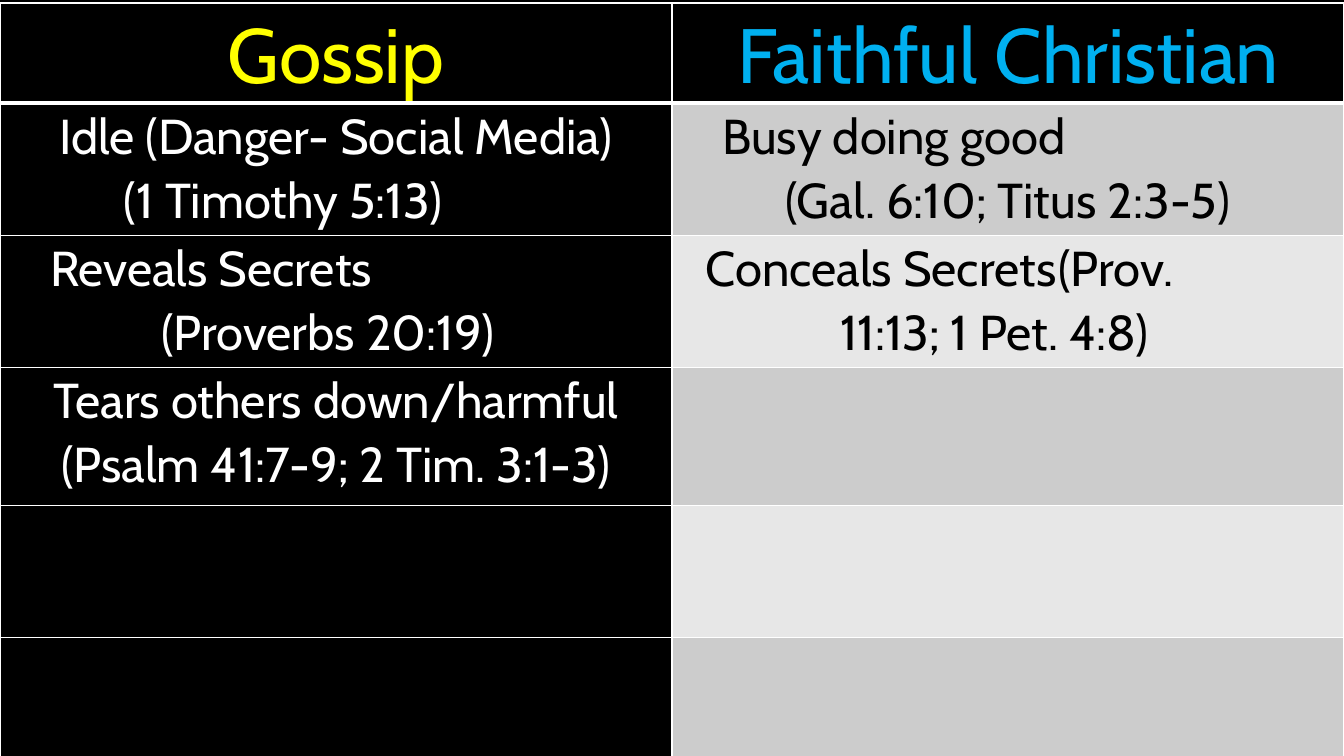
from dataclasses import dataclass

from lxml.etree import SubElement
from pptx import Presentation
from pptx.dml.color import RGBColor
from pptx.enum.text import MSO_ANCHOR, PP_ALIGN as Align
from pptx.oxml.ns import qn
from pptx.table import _Cell as Cell
from pptx.util import Inches, Pt

SLIDE_WIDTH = Inches(13.33)
SLIDE_HEIGHT = Inches(7.5)
COLUMN_WIDTH = SLIDE_WIDTH // 2
TABLE_TOP_PERCENT = 0.4
ROW_PERCENTS = (12.8, 17.47, 17.47, 18.27, 17.47, 18.8)

BLACK, WHITE = "000000", "FFFFFF"
YELLOW, BLUE = "FFFF00", "00B0F0"
BAND_FILLS = ("CCCCCC", "E7E7E7")
CELL_FORMAT = {
    "margin_left": Inches(0.07),
    "margin_right": Inches(0.07),
    "margin_top": 0,
    "margin_bottom": 0,
    "vertical_anchor": MSO_ANCHOR.TOP,
}


@dataclass(frozen=True)
class Line:
    text: str
    indent_percent: float | None = None
    tab_percent: float | None = None


@dataclass(frozen=True)
class Entry:
    lines: tuple[Line, ...]
    color: str
    fill: str
    size: float = 35
    bottom_border: float = 1


def heading(text: str, color: str) -> Entry:
    return Entry((Line(text),), color, BLACK, size=55, bottom_border=3)


GOSSIP = (
    (Line("Idle (Danger- Social Media)"), Line("(1 Timothy 5:13)", 17.4)),
    (Line("Reveals Secrets", 6.4), Line("(Proverbs 20:19)", 23)),
    (Line("Tears others down/harmful"), Line("(Psalm 41:7-9; 2 Tim. 3:1-3)")),
    (),
    (),
)
FAITHFUL = (
    (Line("Busy doing good", 6.4), Line("(Gal. 6:10; Titus 2:3-5)")),
    (Line("Conceals Secrets\t(Prov.", 4, 75.9), Line("11:13; 1 Pet. 4:8)", 24)),
    (),
    (),
    (),
)


def rgb(color: str) -> RGBColor:
    return RGBColor.from_string(color)


def across(percent: float) -> int:
    return round(COLUMN_WIDTH * percent / 100)


def down(percent: float) -> int:
    return round(SLIDE_HEIGHT * percent / 100)


def draw_borders(cell: Cell, top: float, bottom: float) -> None:
    properties = cell._tc.get_or_add_tcPr()
    for side, width in {"lnL": 1, "lnR": 1, "lnT": top, "lnB": bottom}.items():
        border = SubElement(properties, qn(f"a:{side}"), w=str(Pt(width)))
        paint = SubElement(border, qn("a:solidFill"))
        SubElement(paint, qn("a:srgbClr"), val=WHITE)


def write_line(paragraph, line: Line, entry: Entry) -> None:
    centred = line.indent_percent is None
    paragraph.alignment = Align.CENTER if centred else Align.LEFT
    paragraph.line_spacing = 1.07
    properties = paragraph._p.get_or_add_pPr()
    if not centred:
        properties.set("marL", str(across(line.indent_percent)))
        properties.set("indent", "0")
    if line.tab_percent is not None:
        stops = SubElement(properties, qn("a:tabLst"))
        SubElement(stops, qn("a:tab"), pos=str(across(line.tab_percent)), algn="l")
    run = paragraph.add_run()
    run.text = line.text
    run.font.color.rgb = rgb(entry.color)
    for name, value in {"name": "Cabin", "size": Pt(entry.size), "bold": False}.items():
        setattr(run.font, name, value)


def draw_entry(cell: Cell, entry: Entry, top_border: float) -> None:
    for name, value in CELL_FORMAT.items():
        setattr(cell, name, value)
    draw_borders(cell, top_border, entry.bottom_border)
    cell.fill.solid()
    cell.fill.fore_color.rgb = rgb(entry.fill)
    frame = cell.text_frame
    for index, line in enumerate(entry.lines):
        paragraph = frame.add_paragraph() if index else frame.paragraphs[0]
        write_line(paragraph, line, entry)


def main() -> None:
    deck = Presentation()
    deck.slide_width, deck.slide_height = SLIDE_WIDTH, SLIDE_HEIGHT
    slide = deck.slides.add_slide(deck.slide_layouts[6])
    slide.background.fill.solid()
    slide.background.fill.fore_color.rgb = rgb(BLACK)

    comparison = [(heading("Gossip", YELLOW), heading("Faithful Christian", BLUE))]
    for index, (gossip, faithful) in enumerate(zip(GOSSIP, FAITHFUL)):
        band = BAND_FILLS[index % len(BAND_FILLS)]
        comparison.append((Entry(gossip, WHITE, BLACK), Entry(faithful, BLACK, band)))

    table = slide.shapes.add_table(
        len(comparison), 2, 0, down(TABLE_TOP_PERCENT),
        SLIDE_WIDTH, down(sum(ROW_PERCENTS)),
    ).table
    for column in table.columns:
        column.width = COLUMN_WIDTH
    top_border = 1
    for row, (percent, entries) in enumerate(zip(ROW_PERCENTS, comparison)):
        table.rows[row].height = down(percent)
        for column, entry in enumerate(entries):
            draw_entry(table.cell(row, column), entry, top_border)
        top_border = entries[0].bottom_border

    deck.save("out.pptx")


if __name__ == "__main__":
    main()
